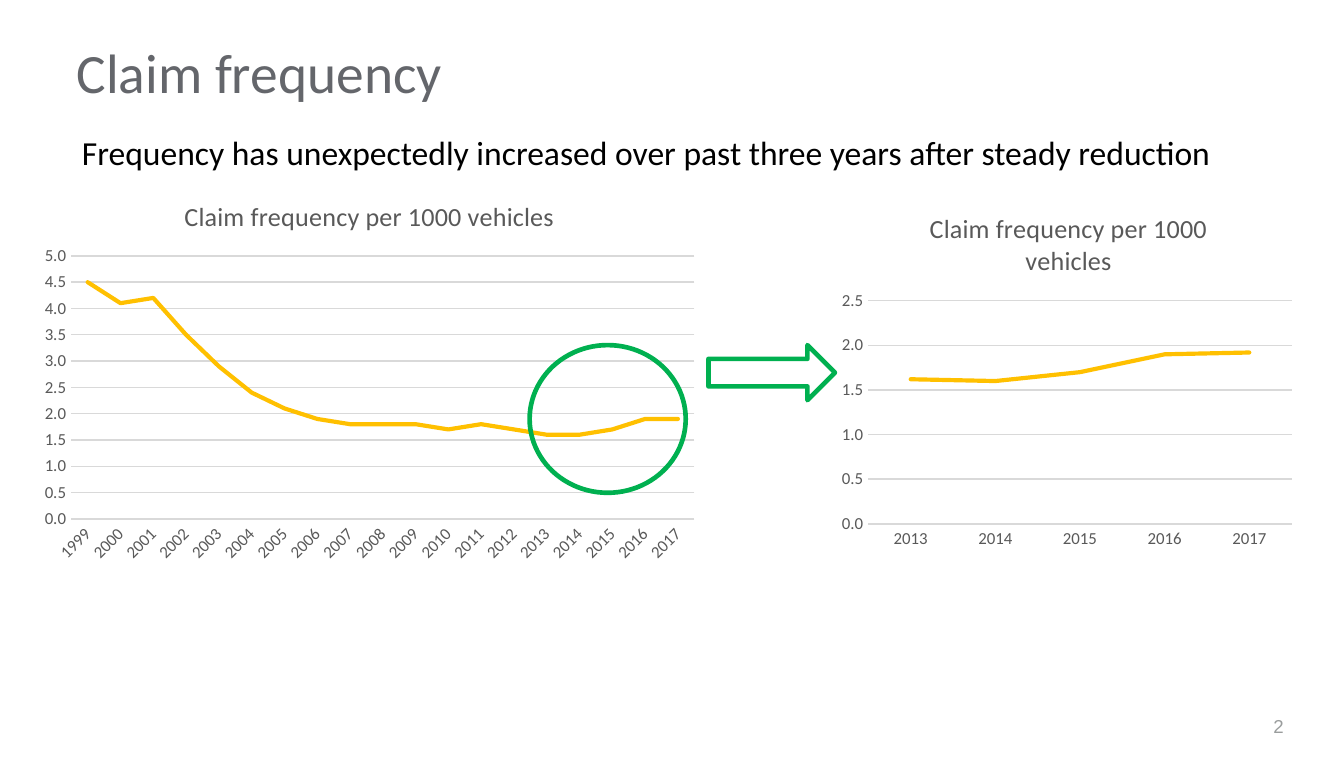
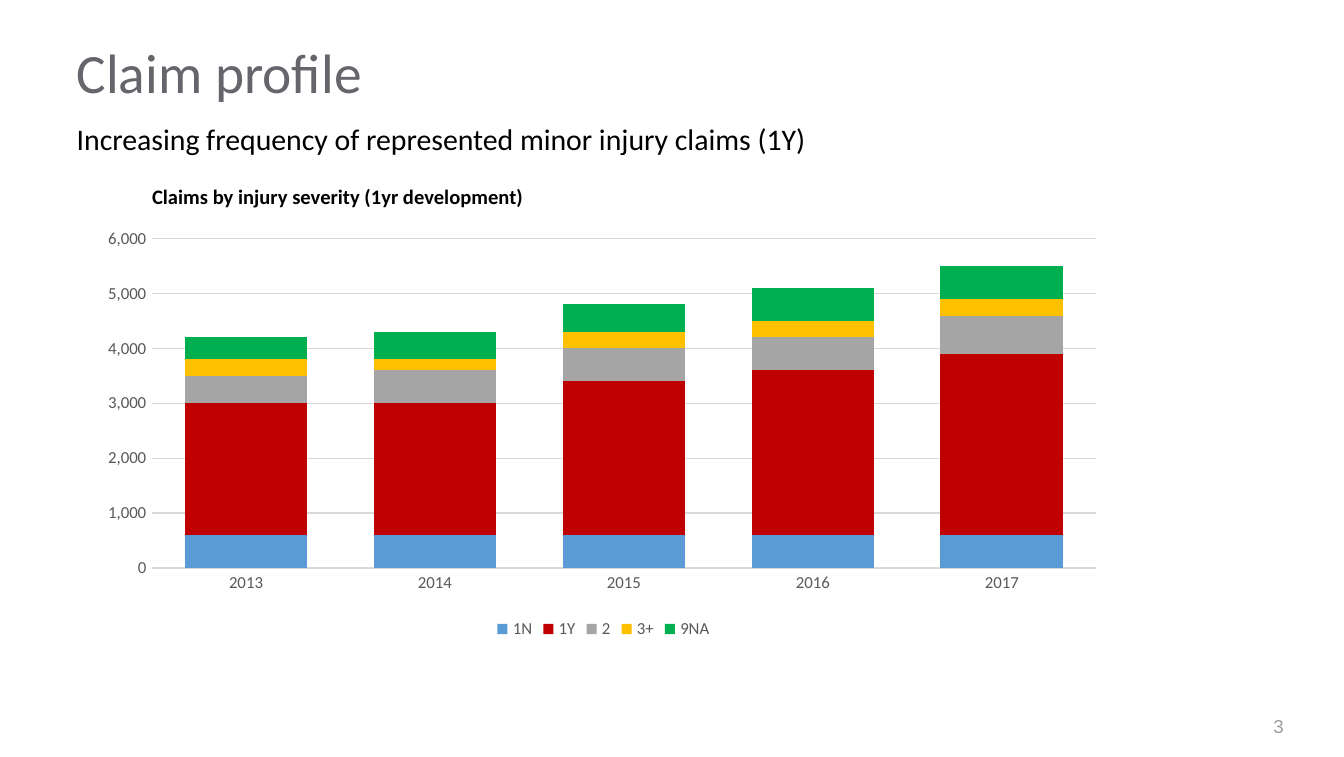
from lxml.etree import SubElement
from pptx import Presentation
from pptx.chart.data import CategoryChartData
from pptx.dml.color import RGBColor
from pptx.enum.chart import XL_CHART_TYPE as ChartType
from pptx.enum.chart import XL_LEGEND_POSITION as LegendPosition
from pptx.enum.chart import XL_TICK_MARK as TickMark
from pptx.enum.shapes import MSO_SHAPE as Shape
from pptx.enum.text import MSO_ANCHOR as Anchor
from pptx.enum.text import PP_ALIGN as Align
from pptx.oxml.ns import qn
from pptx.util import Cm, Pt

COLORS = {
    "title": "64666B",
    "text": "000000",
    "number": "9A9D9D",
    "label": "595959",
    "grid": "D9D9D9",
    "amber": "FFC000",
    "green": "00B050",
    "blue": "5B9BD5",
    "red": "C00000",
    "grey": "A5A5A5",
}


def rgb(name):
    return RGBColor.from_string(COLORS[name])


def set_layout(parent, **fractions):
    """Place a chart title or plot area by fractions of the chart's size."""
    layout = parent.find(qn("c:layout"))
    if layout is None:
        layout = SubElement(parent, qn("c:layout"))
        parent.insert(0, layout)
    manual = SubElement(layout, qn("c:manualLayout"))
    if "w" in fractions:
        SubElement(manual, qn("c:layoutTarget")).set("val", "inner")
    for side in "xy":
        SubElement(manual, qn(f"c:{side}Mode")).set("val", "edge")
    for key, value in fractions.items():
        SubElement(manual, qn(f"c:{key}")).set("val", str(value))


class Slides:
    def __init__(self):
        self.deck = Presentation()
        self.deck.slide_width, self.deck.slide_height = Cm(25.4), Cm(14.3)
        self.page = None

    def font(self, font, size, color, name="Calibri", bold=False):
        font.size, font.name, font.bold = Pt(size), name, bold
        font.color.rgb = rgb(color)

    def text(self, words, at, size, color="text", name="Calibri", bold=False,
             align=Align.LEFT, anchor=Anchor.TOP):
        box = self.page.shapes.add_textbox(*map(Cm, at))
        frame = box.text_frame
        frame.word_wrap, frame.vertical_anchor = True, anchor
        para = frame.paragraphs[0]
        para.text, para.alignment = words, align
        self.font(para.font, size, color, name, bold)
        return para

    def add_page(self, title, number):
        self.page = self.deck.slides.add_slide(self.deck.slide_layouts[6])
        self.text(str(number), (22.78, 13.34, 1.73, 0.76), 10, "number",
                  "Arial", align=Align.RIGHT, anchor=Anchor.MIDDLE)
        heading = self.text(title, (1.2, 0.71, 21.11, 1.42), 29.7, "title",
                            anchor=Anchor.MIDDLE)
        heading.line_spacing = 0.9

    def outline(self, kind, at):
        shape = self.page.shapes.add_shape(kind, *map(Cm, at))
        shape.shadow.inherit = False
        shape.fill.background()
        shape.line.color.rgb = rgb("green")
        shape.line.width = Pt(2.5)

    def chart(self, kind, at, years, series, plot, top, step, number_format):
        data = CategoryChartData()
        data.categories = [str(year) for year in years]
        for name, values in series.items():
            data.add_series(name, values)
        chart = self.page.shapes.add_chart(kind, *map(Cm, at), data).chart
        self.font(chart.font, 10, "text")
        chart.has_title = chart.has_legend = False
        for axis in (chart.category_axis, chart.value_axis):
            axis.major_tick_mark = axis.minor_tick_mark = TickMark.NONE
            self.font(axis.tick_labels.font, 9, "label")
        values = chart.value_axis
        values.minimum_scale, values.maximum_scale = 0, top
        values.major_unit = step
        values.tick_labels.number_format = number_format
        values.tick_labels.number_format_is_linked = False
        values.format.line.fill.background()
        for line in (chart.category_axis.format.line,
                     values.major_gridlines.format.line):
            line.color.rgb = rgb("grid")
            line.width = Pt(0.75)
        plot_area = chart._chartSpace.chart.plotArea
        set_layout(plot_area, **dict(zip("xywh", plot)))
        return chart

    def frequency_chart(self, at, frequencies, plot, title_at, top):
        chart = self.chart(ChartType.LINE, at, frequencies,
                           {"Series 1": frequencies.values()},
                           plot, top, 0.5, "#,##0.0")
        chart.has_title = True
        para = chart.chart_title.text_frame.paragraphs[0]
        para.text = "Claim frequency per 1000 vehicles"
        self.font(para.font, 14, "label")
        set_layout(chart.chart_title._element, **dict(zip("xy", title_at)))
        line = chart.plots[0].series[0]
        line.smooth = False
        line.format.line.color.rgb = rgb("amber")
        line.format.line.width = Pt(2.25)
        line.format.line._get_or_add_ln().set("cap", "rnd")
        return chart

    def stacked_chart(self, at, years, series, colors, plot):
        chart = self.chart(ChartType.COLUMN_STACKED, at, years, series,
                           plot, 6000, 1000, "#,##0")
        columns = chart.plots[0]
        columns.gap_width, columns.overlap = 54, 100
        columns.vary_by_categories = False
        for column, color in zip(columns.series, colors):
            column.format.fill.solid()
            column.format.fill.fore_color.rgb = rgb(color)
        chart.has_legend = True
        chart.legend.position = LegendPosition.BOTTOM
        chart.legend.include_in_layout = False
        self.font(chart.legend.font, 9, "label")


def frequency_page(slides):
    slides.add_page("Claim frequency", 2)
    history = [4.5, 4.1, 4.2, 3.5, 2.9, 2.4, 2.1, 1.9, 1.8, 1.8,
               1.8, 1.7, 1.8, 1.7, 1.6, 1.6, 1.7, 1.9, 1.9]
    chart = slides.frequency_chart(
        (0.58, 3.35, 12.8, 7.42), dict(enumerate(history, 1999)),
        (0.06, 0.2, 0.92, 0.67), (0.22, 0.04), 5)
    label_body = chart.category_axis._element.find(qn("c:txPr")).bodyPr
    label_body.set("rot", "-2700000")
    slides.frequency_chart(
        (15.7, 3.61, 8.89, 6.91),
        dict(enumerate([1.62, 1.6, 1.7, 1.9, 1.92], 2013)),
        (0.08, 0.3, 0.9, 0.61), (0.2, 0.04), 2.5)
    slides.outline(Shape.OVAL, (10.01, 6.52, 2.95, 2.79))
    slides.outline(Shape.RIGHT_ARROW, (13.39, 6.52, 2.39, 1.04))
    slides.text("Frequency has unexpectedly increased over past three years "
                "after steady reduction", (1.3, 2.36, 22.2, 1.02), 18)


def profile_page(slides):
    slides.add_page("Claim profile", 3)
    slides.text("Claims by injury severity (1yr development)",
                (1.9, 3.35, 8.97, 1.14), 11, bold=True, align=Align.CENTER)
    severities = {
        "1N": [600, 600, 600, 600, 600],
        "1Y": [2400, 2400, 2800, 3000, 3300],
        "2": [500, 600, 600, 600, 700],
        "3+": [300, 200, 300, 300, 300],
        "9NA": [400, 500, 500, 600, 600],
    }
    slides.stacked_chart((1.7, 4.19, 19.41, 7.98), range(2013, 2018),
                         severities, ["blue", "red", "grey", "amber", "green"],
                         (0.06, 0.04, 0.92, 0.78))
    slides.text("Increasing frequency of represented minor injury claims (1Y)",
                (1.2, 2.16, 22.5, 0.94), 16)


def main():
    slides = Slides()
    frequency_page(slides)
    profile_page(slides)
    slides.deck.save("out.pptx")


if __name__ == "__main__":
    main()
